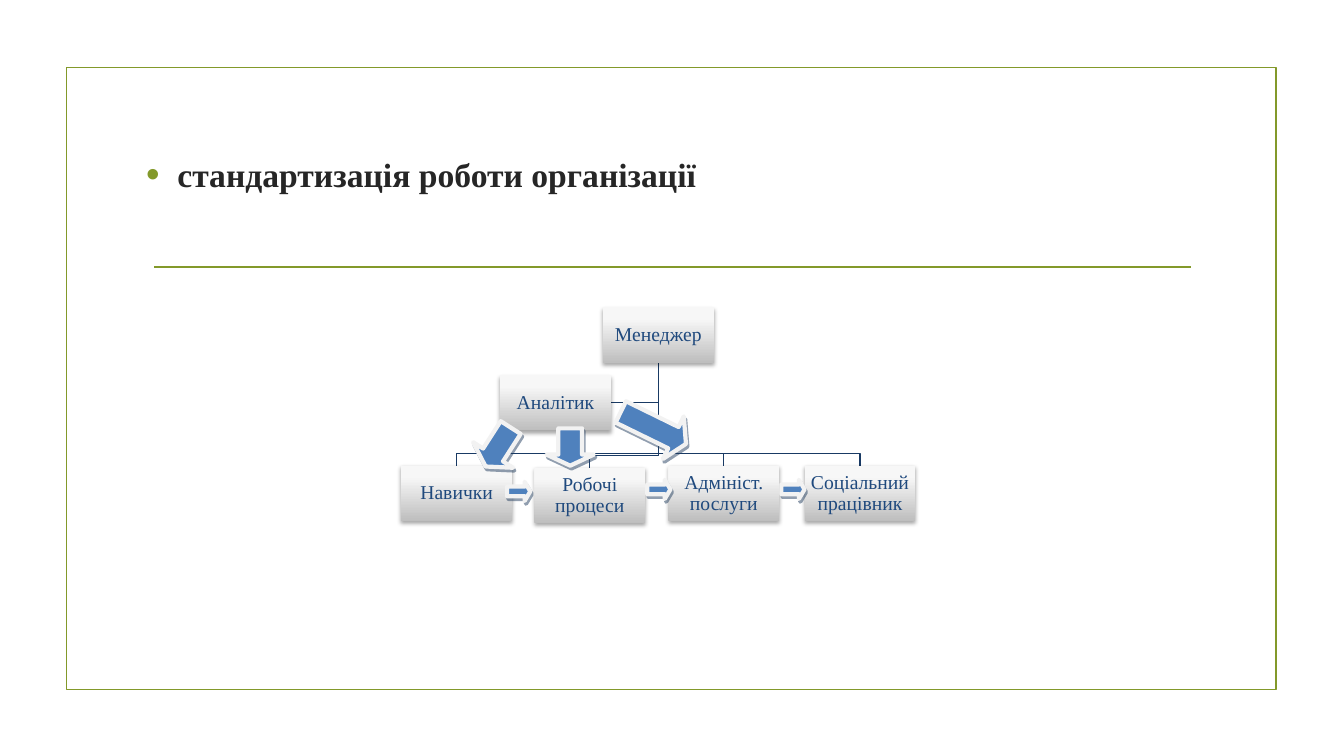
from lxml.etree import SubElement
from pptx import Presentation
from pptx.dml.color import RGBColor
from pptx.enum.shapes import MSO_CONNECTOR, MSO_SHAPE
from pptx.enum.text import MSO_ANCHOR, PP_ALIGN
from pptx.oxml.ns import qn
from pptx.util import Inches, Pt

OLIVE = RGBColor(0x83, 0x99, 0x2A)
INK = RGBColor(0x26, 0x26, 0x26)
NAVY = RGBColor(0x1F, 0x49, 0x7D)
BRANCH = RGBColor(0x19, 0x3A, 0x64)
BLUE = RGBColor(0x4F, 0x81, 0xBD)
ARROW_EDGE = RGBColor(0xF2, 0xF2, 0xF2)
ARROW_SHADE = RGBColor(0x24, 0x3F, 0x60)
NODE_DARK = RGBColor(0xBE, 0xBE, 0xBE)
NODE_LIGHT = RGBColor(0xF7, 0xF7, 0xF7)
BLACK = RGBColor(0, 0, 0)
FONT = "Times New Roman"

NODE_W, NODE_H = 1.1, 0.55
BUS_GAP = 0.12

# Offsets from the left top corner of the organisation chart
MANAGER = ("Менеджер", 2, 0)
ANALYST = ("Аналітик", 0.98, 0.67)
UNITS = [
    ("Навички", 0, 1.57),
    ("Робочі процеси", 1.32, 1.59),
    ("Адмініст. послуги", 2.65, 1.57),
    ("Соціальний працівник", 4, 1.57),
]
# left, top, width, height, rotation
ARROWS = [
    (0.73, 1.15, 0.46, 0.47, 122.7),
    (1.49, 1.15, 0.37, 0.47, 90),
    (2.14, 0.96, 0.72, 0.47, 26.1),
    (1.05, 1.73, 0.23, 0.19, 0),
    (2.44, 1.71, 0.23, 0.19, 0),
    (3.77, 1.71, 0.23, 0.19, 0),
]


def style_font(font, **values):
    color = values.pop("color")
    for name, value in values.items():
        setattr(font, name, value)
    font.color.rgb = color


def style_line(line, color, width):
    line.color.rgb = color
    line.width = Pt(width)


def add_shadow(shape, color, opacity, blur, distance, angle):
    shape.shadow.inherit = False
    effects = shape._element.spPr.find(qn("a:effectLst"))
    outer = SubElement(effects, qn("a:outerShdw"), blurRad=str(Pt(blur)), dist=str(Pt(distance)),
                       dir=str(angle * 60000), algn="ctr", rotWithShape="0")
    tone = SubElement(outer, qn("a:srgbClr"), val=str(color))
    SubElement(tone, qn("a:alpha"), val=str(opacity * 1000))


def add_frame(slide, left, top, width, height):
    """Outline of the page with the divider inside it."""
    border = slide.shapes.add_shape(MSO_SHAPE.RECTANGLE, Inches(left), Inches(top),
                                    Inches(width), Inches(height))
    border.fill.background()
    border.shadow.inherit = False
    style_line(border.line, OLIVE, 1.25)
    divider_y = Inches(top + 1.98)
    divider = slide.shapes.add_connector(MSO_CONNECTOR.STRAIGHT, Inches(left + 0.87), divider_y,
                                         Inches(left + width - 0.85), divider_y)
    style_line(divider.line, OLIVE, 1.25)
    SubElement(divider._element.spPr, qn("a:effectLst"))


def fill_body(slide, left, top, width, height):
    slide.shapes.title._element.getparent().remove(slide.shapes.title._element)
    body = slide.placeholders[1]
    box = {"left": left, "top": top, "width": width, "height": height}
    for name, value in box.items():
        setattr(body, name, Inches(value))
    paragraph = body.text_frame.paragraphs[0]
    paragraph.text = "стандартизація роботи організації"
    paragraph.space_before, paragraph.space_after = Pt(0), Pt(6)
    props = paragraph._p.get_or_add_pPr()
    props.set("marL", str(Inches(0.31)))
    props.set("indent", str(-Inches(0.31)))
    SubElement(SubElement(props, qn("a:buClr")), qn("a:srgbClr"), val=str(OLIVE))
    SubElement(props, qn("a:buSzPct"), val="115000")
    SubElement(props, qn("a:buFont"), typeface="Arial")
    SubElement(props, qn("a:buChar"), char="•")
    style_font(paragraph.runs[0].font, name=FONT, size=Pt(24), bold=True, color=INK)


def add_branch(slide, points):
    corners = [(Inches(x), Inches(y)) for x, y in points]
    builder = slide.shapes.build_freeform(*corners[0])
    builder.add_line_segments(corners[1:], close=False)
    branch = builder.convert_to_shape()
    branch.fill.background()
    branch.shadow.inherit = False
    style_line(branch.line, BRANCH, 0.75)


def add_node(slide, label, left, top):
    node = slide.shapes.add_shape(MSO_SHAPE.RECTANGLE, Inches(left), Inches(top),
                                  Inches(NODE_W), Inches(NODE_H))
    node.fill.gradient()
    node.fill.gradient_angle = 90
    for stop, color, position in zip(node.fill.gradient_stops, (NODE_DARK, NODE_LIGHT), (0, 0.8)):
        stop.color.rgb = color
        stop.position = position
    node.line.fill.background()
    add_shadow(node, BLACK, 35, 3.1, 1.8, 90)
    frame = node.text_frame
    frame.word_wrap = True
    frame.vertical_anchor = MSO_ANCHOR.MIDDLE
    for side in ("left", "top", "right", "bottom"):
        setattr(frame, f"margin_{side}", Inches(0.01))
    paragraph = frame.paragraphs[0]
    paragraph.text = label
    paragraph.alignment = PP_ALIGN.CENTER
    paragraph.line_spacing = 0.9
    style_font(paragraph.runs[0].font, name=FONT, size=Pt(14), color=NAVY)


def add_arrow(slide, left, top, width, height, rotation):
    arrow = slide.shapes.add_shape(MSO_SHAPE.RIGHT_ARROW, Inches(left), Inches(top),
                                   Inches(width), Inches(height))
    arrow.adjustments[0], arrow.adjustments[1] = 0.5, 0.296
    arrow.rotation = rotation
    arrow.fill.solid()
    arrow.fill.fore_color.rgb = BLUE
    style_line(arrow.line, ARROW_EDGE, 3)
    add_shadow(arrow, ARROW_SHADE, 50, 0, 2.2, 63)


def add_organisation(slide, left, top):
    trunk_x = left + MANAGER[1] + NODE_W / 2
    trunk_y = top + MANAGER[2] + NODE_H
    analyst_y = top + ANALYST[2] + NODE_H / 2
    add_branch(slide, [(trunk_x, trunk_y), (trunk_x, analyst_y),
                       (left + ANALYST[1] + NODE_W, analyst_y)])
    for _, x, y in reversed(UNITS):
        unit_x, unit_y = left + x + NODE_W / 2, top + y
        bus_y = unit_y - BUS_GAP
        add_branch(slide, [(trunk_x, trunk_y), (trunk_x, bus_y), (unit_x, bus_y), (unit_x, unit_y)])
    for label, x, y in [MANAGER, *UNITS, ANALYST]:
        add_node(slide, label, left + x, top + y)
    for x, y, *shape in ARROWS:
        add_arrow(slide, left + x, top + y, *shape)


def main():
    deck = Presentation()
    deck.slide_width, deck.slide_height = Inches(13.33), Inches(7.5)
    slide = deck.slides.add_slide(deck.slide_layouts[1])
    add_frame(slide, 0.66, 0.67, 12, 6.17)
    fill_body(slide, 1.35, 1.48, 10.5, 4.67)
    add_organisation(slide, 3.98, 3.05)
    deck.save("out.pptx")


if __name__ == "__main__":
    main()
